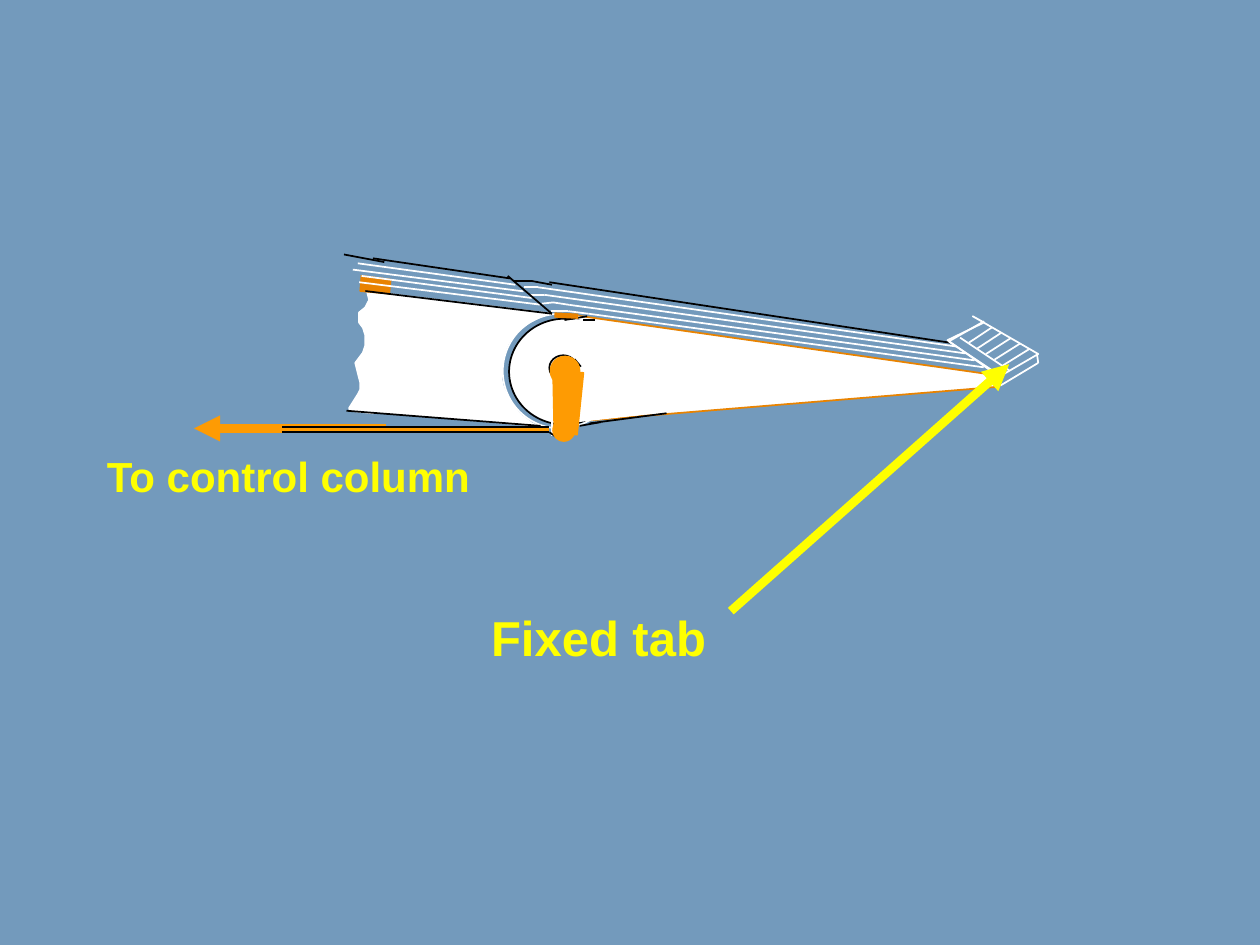
from itertools import pairwise
from math import cos, radians, sin

from lxml import etree
from pptx import Presentation
from pptx import util as u
from pptx.dml.color import RGBColor
from pptx.enum import shapes, text
from pptx.oxml.ns import qn

PX = 9144  # 100 px to the inch
SKY = RGBColor(0x73, 0x9A, 0xBC)
WHITE = RGBColor(0xFF, 0xFF, 0xFF)
BLACK = RGBColor(0, 0, 0)
ORANGE = RGBColor(0xFE, 0x9B, 0x03)
RUST = RGBColor(0xE9, 0x83, 0x00)
YELLOW = RGBColor(0xFF, 0xFF, 0x00)

prs = Presentation()
prs.slide_width, prs.slide_height = 1000 * PX, 750 * PX
s = prs.slides.add_slide(prs.slide_layouts[6])
s.background.fill.solid()
s.background.fill.fore_color.rgb = SKY


def add_outline(outline, fill, line):
    """Draw an ellipse from (left, top, width, height) or a freeform from a list of points."""
    if isinstance(outline, tuple):
        sp = s.shapes.add_shape(shapes.MSO_SHAPE.OVAL, *[v * PX for v in outline])
    else:
        builder = s.shapes.build_freeform(*outline[0], scale=PX)
        builder.add_line_segments(outline[1:], close=True)
        sp = builder.convert_to_shape()
    sp.shadow.inherit = False
    if fill is None:
        sp.fill.background()
    else:
        sp.fill.solid()
        sp.fill.fore_color.rgb = fill
    sp.line.color.rgb = line
    sp.line.width = u.Pt(1)


def add_path(color, *points, width=1, arrow=False):
    """Join consecutive points with straight connectors."""
    for start, end in pairwise(points):
        ends = [round(v * PX) for v in start + end]
        c = s.shapes.add_connector(shapes.MSO_CONNECTOR.STRAIGHT, *ends)
        c.line.color.rgb = color
        c.line.width = u.Pt(width)
        if arrow:
            etree.SubElement(c.line._get_or_add_ln(), qn("a:tailEnd"), type="triangle")
        etree.SubElement(c._element.spPr, qn("a:effectLst"))


# Control surface: a long wedge with a round nose
wedge = [(455, 250), (792, 298), (796, 298), (792, 307), (451, 335)]
wedge_root = [(449, 255), (453, 335), (507, 329), (505, 261), (457, 254)]
nose = (404, 253, 88, 84)
nose_gap = (399, 249, 91, 91)
add_outline(wedge, WHITE, RUST)
add_outline(nose, WHITE, BLACK)
add_outline(nose_gap, None, WHITE)
add_outline(wedge_root, WHITE, WHITE)

# Fixed wing: its rear is an arc around the hinge, its front is torn off
hinge_x, hinge_y, socket_radius = 444, 295, 46
socket = [
    (round(hinge_x + socket_radius * cos(radians(a))),
     round(hinge_y - socket_radius * sin(radians(a))))
    for a in range(98, 249, 6)
]
wing_front = [(288, 326), (297, 232)]
torn_edge = [
    (298, 231), (296, 328), (278, 326), (277, 324), (284, 313), (286, 309),
    (286, 304), (282, 288), (288, 280), (290, 274), (290, 266), (288, 260),
    (285, 256), (285, 248), (290, 244), (293, 238), (291, 230),
]
spar = [(309, 233), (286, 231), (287, 219), (310, 222)]
add_outline(socket + wing_front, WHITE, WHITE)
add_outline(torn_edge, WHITE, WHITE)
add_outline(spar, RUST, RUST)

# Far edges, seen behind the cut section
wing_far_edge = [(405, 221), (296, 205)]
wing_far_tip = [(305, 208), (273, 202)]
surface_far_edge = [(754, 272), (436, 224)]
far_seam = [(438, 226), (422, 223), (408, 223)]
for edge in (wing_far_edge, wing_far_tip, surface_far_edge, far_seam):
    add_path(BLACK, *edge)

# Short strokes that finish the nose of the surface
nose_top = [(448, 254), (466, 251)]
nose_top_end = [(463, 254), (472, 254)]
nose_bottom = [(460, 338), (477, 335)]
surface_bottom = [(468, 336), (529, 328)]
for stroke in (nose_top, nose_top_end, nose_bottom, surface_bottom):
    add_path(BLACK, *stroke)

# Fixed tab: a frame crossed by evenly spaced ribs
tab_frame = [(793, 299), (824, 281), (772, 251), (781, 256), (752, 270)]
tab_near_edge = [(795, 299), (753, 271), (781, 255)]
tab_thickness = [(794, 306), (824, 288), (823, 281)]
rib_base = [(762, 268), (801, 294)]
add_outline(tab_frame, None, WHITE)
for edge in (tab_near_edge, tab_thickness, rib_base):
    add_path(WHITE, *edge)
for i in range(5):
    add_path(WHITE, (769 + 6.75 * i, 272 + 4.5 * i), (787 + 7.5 * i, 260 + 4.25 * i))

# Shading: each line runs along the wing, steps over the seam and follows the surface
torn_ends = [284, 280, 287, 285]
seams = [
    [(416, 228), (427, 228)],
    [(421, 234), (432, 234)],
    [(430, 241), (439, 240), (452, 242)],
    [(437, 247), (451, 247), (467, 249)],
]
for i, (torn_x, seam) in enumerate(zip(torn_ends, seams)):
    add_path(WHITE, (409 + 6.5 * i, 226 + 5.25 * i), (torn_x, 209 + 5 * i))
    add_path(WHITE, *seam, (759 + 7.25 * i, 275 + 5.5 * i))

# Near edges of the wing
hinge_top = (438, 249)
add_path(BLACK, (403, 219), hinge_top, (290, 231))
add_path(BLACK, (429, 338), (275, 326))

# Control rod and its pull towards the control column
rod_y, rod_left, rod_right = 341, 224, 436
add_path(ORANGE, (306, 340), (154, 340), width=5, arrow=True)
add_path(ORANGE, (rod_left, rod_y), (rod_right, rod_y), width=2)
for edge_y in (rod_y - 2, rod_y + 2):
    add_path(BLACK, (rod_left, edge_y), (rod_right, edge_y))

# Control lever: a tapered arm from the pivot down to the rod
pivot_rim = (436, 282, 22, 20)
pivot = (437, 283, 23, 23)
arm = [(463, 296), (458, 345), (440, 343), (439, 295)]
rod_joint = (439, 333, 17, 17)
add_outline(pivot_rim, None, BLACK)
add_outline(arm, ORANGE, ORANGE)
add_path(WHITE, (438, 335), (438, 346))
add_path(BLACK, (436, 343), (443, 348))
add_path(BLACK, (456, 285), (461, 291))
add_outline(pivot, ORANGE, ORANGE)
add_outline(rod_joint, ORANGE, ORANGE)
add_path(RUST, (440, 250), (459, 251), width=3)

# Labels and pointer
for label, box, size, wrap in [
    ("To control column", (75, 353, 362, 50), 24, True),
    ("Fixed tab", (380, 477, 193, 57), 28, False),
]:
    tf = s.shapes.add_textbox(*[v * PX for v in box]).text_frame
    tf.word_wrap = wrap
    tf.auto_size = text.MSO_AUTO_SIZE.SHAPE_TO_FIT_TEXT
    p = tf.paragraphs[0]
    p.text = label
    p.font.name = "Arial"
    p.font.size = u.Pt(size)
    p.font.bold = True
    p.font.color.rgb = YELLOW
add_path(YELLOW, (580, 485), (801, 289), width=5, arrow=True)

prs.save("out.pptx")
